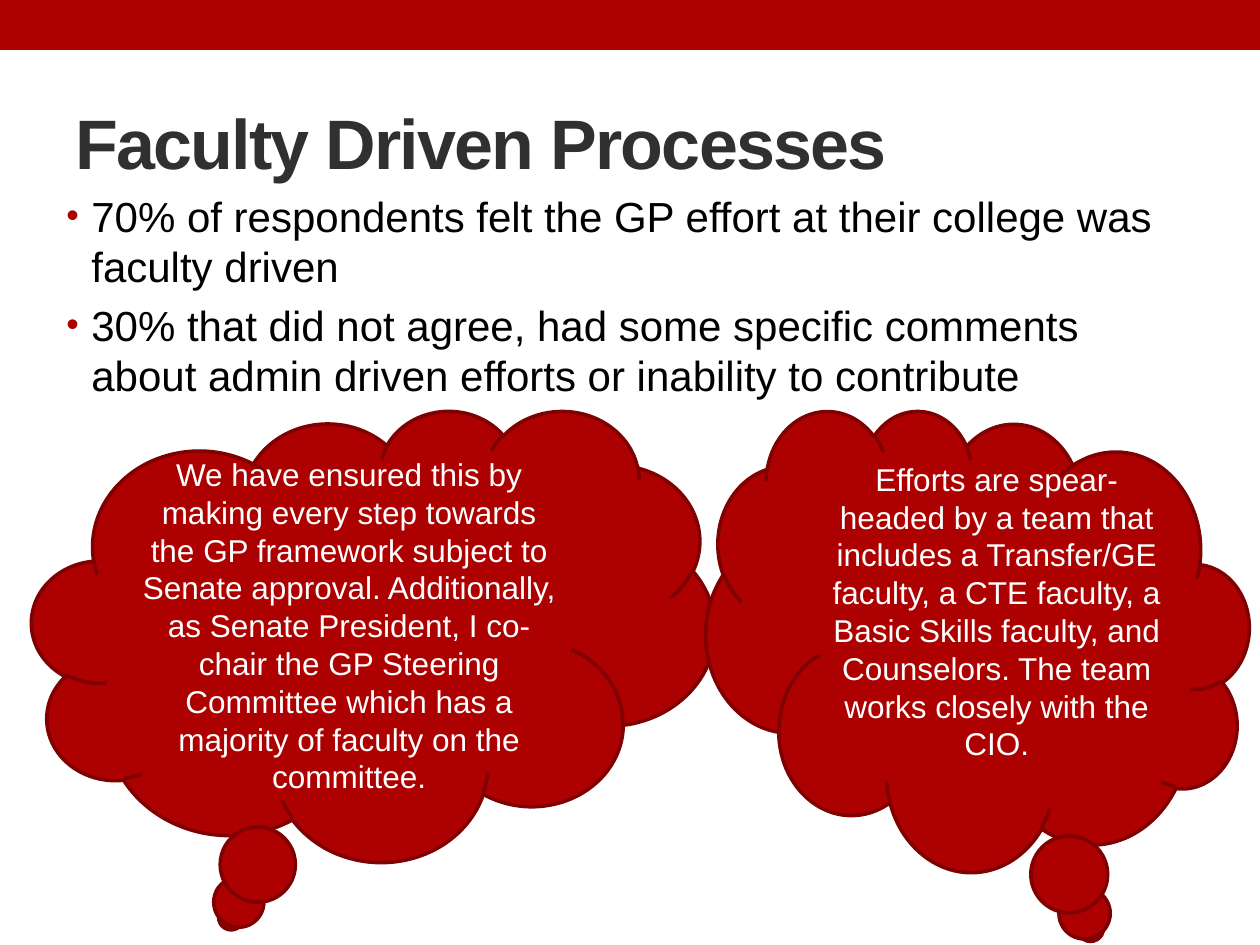
from dataclasses import dataclass
from lxml.etree import SubElement
from pptx import Presentation
from pptx.dml.color import RGBColor
from pptx.enum.shapes import MSO_SHAPE
from pptx.enum.text import MSO_ANCHOR, PP_ALIGN
from pptx.oxml.ns import qn
from pptx.util import Pt

SCALE = 914400 / 126


@dataclass(frozen=True)
class Theme:
    """Hold the colours, type sizes and font."""
    red: str = "AD0101"
    edge: str = "800101"
    dark: str = "303030"
    black: str = "000000"
    white: str = "FFFFFF"
    font: str = "Arial"
    title: int = 40
    body: int = 24
    cloud: int = 18


THEME = Theme()


def px(*nums):
    """Turn whole px into EMU."""
    return [round(num * SCALE) for num in nums]


def assign(item, values):
    """Set attributes from a dict of values."""
    for name, value in values.items():
        setattr(item, name, value)


def write(para, text, size, color, bold=False):
    """Add one styled run to a paragraph."""
    run = para.add_run()
    run.text = text
    assign(run.font, {"name": THEME.font, "size": Pt(size), "bold": bold})
    run.font.color.rgb = RGBColor.from_string(color)
    return run


def add_box(slide, box):
    """Add a wrapping text box and return its frame."""
    frame = slide.shapes.add_textbox(*px(*box)).text_frame
    frame.word_wrap = True
    return frame


def add_title(slide, box, text):
    """Add the tightly spaced bold title."""
    frame = add_box(slide, box)
    frame.vertical_anchor = MSO_ANCHOR.MIDDLE
    run = write(frame.paragraphs[0], text, THEME.title, THEME.dark, True)
    run.font._element.set("spc", "-100")


def add_list(slide, box, items):
    """Add a list with small red bullets."""
    frame = add_box(slide, box)
    indent, = px(25)
    for num, text in enumerate(items):
        para = frame.add_paragraph() if num else frame.paragraphs[0]
        para.space_before = Pt(THEME.body * 0.2)
        props = para._p.get_or_add_pPr()
        props.set("marL", str(indent))
        props.set("indent", str(-indent))
        tint = SubElement(props, qn("a:buClr"))
        SubElement(tint, qn("a:srgbClr"), val=THEME.red)
        SubElement(props, qn("a:buSzPct"), val="85000")
        SubElement(props, qn("a:buFont"), typeface=THEME.font)
        SubElement(props, qn("a:buChar"), char="•")
        write(para, text, THEME.body, THEME.black)


def add_shape(slide, kind, box):
    """Add a flat red preset shape."""
    shape = slide.shapes.add_shape(kind, *px(*box))
    shape.shadow.inherit = False
    shape.fill.solid()
    shape.fill.fore_color.rgb = RGBColor.from_string(THEME.red)
    return shape


def add_cloud(slide, box, text, flip=False, foot=6):
    """Add a thought cloud with centred text."""
    cloud = add_shape(slide, MSO_SHAPE.CLOUD_CALLOUT, box)
    cloud.line.width = Pt(2.08)
    cloud.line.color.rgb = RGBColor.from_string(THEME.edge)
    if flip:
        cloud._element.spPr.xfrm.set("flipH", "1")
    frame = cloud.text_frame
    assign(frame, {"word_wrap": True, "vertical_anchor": MSO_ANCHOR.MIDDLE,
                   "margin_bottom": px(foot)[0]})
    para = frame.paragraphs[0]
    para.alignment = PP_ALIGN.CENTER
    write(para, text, THEME.cloud, THEME.white)


def main():
    """Build and save the slide."""
    deck = Presentation()
    wide, high = px(1260, 945)
    assign(deck, {"slide_width": wide, "slide_height": high})
    slide = deck.slides.add_slide(deck.slide_layouts[6])
    band = add_shape(slide, MSO_SHAPE.RECTANGLE, (0, 0, 1260, 50))
    band.line.fill.background()
    add_title(slide, (63, 73, 1134, 136), "Faculty Driven Processes")
    add_list(slide, (54, 184, 1134, 708), [
        "70% of respondents felt the GP effort at their college was "
        "faculty driven",
        "30% that did not agree, had some specific comments about admin "
        "driven efforts or inability to contribute",
    ])
    add_cloud(slide, (32, 410, 683, 451),
              "We have ensured this by making every step towards the GP "
              "framework subject to Senate approval. Additionally, as Senate "
              "President, I co-chair the GP Steering Committee which has a "
              "majority of faculty on the committee.")
    add_cloud(slide, (706, 410, 543, 461),
              "Efforts are spear-headed by a team that includes a "
              "Transfer/GE faculty, a CTE faculty, a Basic Skills faculty, "
              "and Counselors. The team works closely with the CIO.",
              flip=True, foot=44)
    deck.save("out.pptx")


if __name__ == "__main__":
    main()
